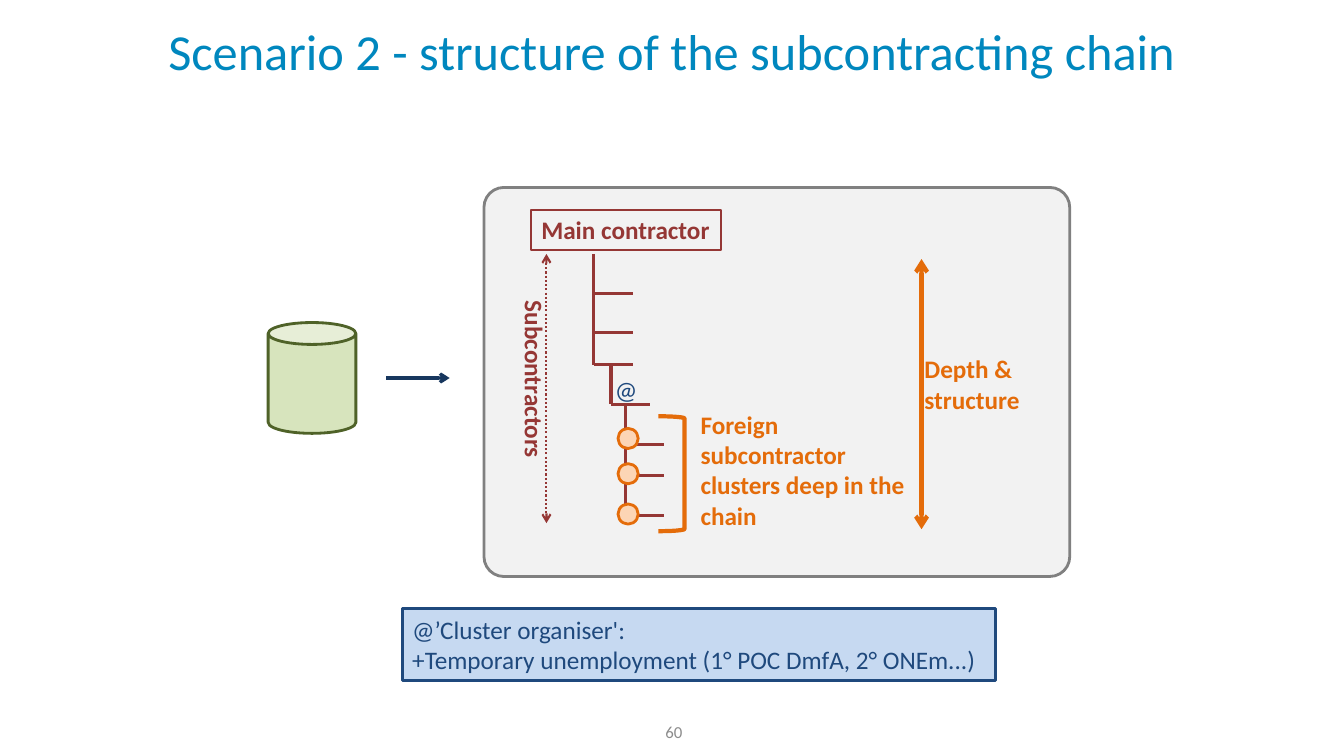
from dataclasses import dataclass
from typing import Optional

from lxml import etree
from pptx import Presentation
from pptx.dml.color import RGBColor
from pptx.enum import dml, shapes, text
from pptx.oxml import ns
from pptx.util import Inches, Pt

TITLE_BLUE = RGBColor(0x00, 0x87, 0xBE)
NAVY = RGBColor(0x1F, 0x49, 0x7D)
DARK_NAVY = RGBColor(0x17, 0x37, 0x5E)
PALE_BLUE = RGBColor(0xC6, 0xD9, 0xF1)
RED = RGBColor(0x95, 0x37, 0x35)
ORANGE = RGBColor(0xE4, 0x6C, 0x0A)
PEACH = RGBColor(0xFC, 0xD5, 0xB5)
GREEN = RGBColor(0x4F, 0x62, 0x28)
PALE_GREEN = RGBColor(0xD7, 0xE4, 0xBD)
GREY = RGBColor(0x80, 0x80, 0x80)
PALE_GREY = RGBColor(0xF2, 0xF2, 0xF2)
NUMBER_GREY = RGBColor(0x8C, 0x8C, 0x8C)

FONT = "Calibri"
BRANCH = 0.39  # length of each step of the subcontracting tree
CIRCLE = 0.2


@dataclass
class Figure:
    kind: shapes.MSO_SHAPE
    left: float
    top: float
    width: float
    height: float
    line: RGBColor
    line_width: float = 2
    fill: Optional[RGBColor] = None


@dataclass
class Line:
    x1: float
    y1: float
    x2: float
    y2: float
    color: RGBColor
    width: float = 2.25
    ends: tuple[str, ...] = ()
    dotted: bool = False


@dataclass
class Label:
    left: float
    top: float
    width: float
    height: float
    lines: tuple[str, ...]
    color: RGBColor
    bold: bool = True
    wrap: bool = False
    rotation: float = 0
    size: float = 18
    align: text.PP_ALIGN = text.PP_ALIGN.LEFT
    anchor: text.MSO_ANCHOR = text.MSO_ANCHOR.TOP


def draw_figure(page, figure: Figure):
    shape = page.shapes.add_shape(
        figure.kind, Inches(figure.left), Inches(figure.top),
        Inches(figure.width), Inches(figure.height))
    shape.shadow.inherit = False
    if figure.fill is None:
        shape.fill.background()
    else:
        shape.fill.solid()
        shape.fill.fore_color.rgb = figure.fill
    shape.line.color.rgb = figure.line
    shape.line.width = Pt(figure.line_width)
    return shape


def draw_line(page, line: Line) -> None:
    connector = page.shapes.add_connector(
        shapes.MSO_CONNECTOR.STRAIGHT, Inches(line.x1), Inches(line.y1),
        Inches(line.x2), Inches(line.y2))
    connector.line.color.rgb = line.color
    connector.line.width = Pt(line.width)
    if line.dotted:
        connector.line.dash_style = dml.MSO_LINE.ROUND_DOT
    properties = connector._element.spPr
    outline = properties.find(ns.qn("a:ln"))
    for end in line.ends:
        etree.SubElement(outline, ns.qn(f"a:{end}"), type="arrow")
    etree.SubElement(properties, ns.qn("a:effectLst"))


def write(frame, label: Label) -> None:
    frame.word_wrap = label.wrap
    frame.vertical_anchor = label.anchor
    for index, line in enumerate(label.lines):
        para = frame.add_paragraph() if index else frame.paragraphs[0]
        para.alignment = label.align
        span = para.add_run()
        span.text = line
        span.font.name = FONT
        span.font.size = Pt(label.size)
        span.font.bold = label.bold
        span.font.color.rgb = label.color


def draw_label(page, label: Label) -> None:
    box = page.shapes.add_textbox(
        Inches(label.left), Inches(label.top), Inches(label.width), Inches(label.height))
    box.rotation = label.rotation
    write(box.text_frame, label)


def draw_framed_label(page, label: Label, line: RGBColor, line_width: float,
                      fill: Optional[RGBColor] = None) -> None:
    frame = Figure(shapes.MSO_SHAPE.RECTANGLE, label.left, label.top,
                   label.width, label.height, line, line_width, fill)
    write(draw_figure(page, frame).text_frame, label)


def main() -> None:
    deck = Presentation()
    deck.slide_width, deck.slide_height = Inches(13.33), Inches(7.5)
    page = deck.slides.add_slide(deck.slide_layouts[5])

    # Title
    title = page.shapes.title
    title.left, title.top = Inches(0.21), Inches(0)
    title.width, title.height = Inches(12.91), Inches(0.99)
    write(title.text_frame, Label(
        0.21, 0, 12.91, 0.99, ("Scenario 2 - structure of the subcontracting chain",),
        TITLE_BLUE, bold=False, wrap=True, size=36,
        align=text.PP_ALIGN.CENTER, anchor=text.MSO_ANCHOR.MIDDLE))

    # Panel
    panel = draw_figure(page, Figure(
        shapes.MSO_SHAPE.ROUNDED_RECTANGLE, 4.8, 1.86, 5.81, 3.86, GREY, fill=PALE_GREY))
    panel.adjustments[0] = 0.051

    # Subcontracting tree: a stem down to each node, then a branch to the right
    nodes = [(5.89, 2.91), (5.89, 3.3), (5.89, 3.62), (6.06, 4.01),
             (6.2, 4.41), (6.2, 4.72), (6.2, 5.11)]
    for x, y in nodes:
        draw_line(page, Line(x, y - BRANCH, x, y, RED))
        draw_line(page, Line(x, y, x + BRANCH, y, RED))

    # Foreign cluster
    draw_figure(page, Figure(
        shapes.MSO_SHAPE.RIGHT_BRACKET, 6.53, 4.13, 0.26, 1.14, ORANGE, 3))
    for top in (4.25, 4.6, 5):
        draw_figure(page, Figure(
            shapes.MSO_SHAPE.OVAL, 6.13, top, CIRCLE, CIRCLE, ORANGE, fill=PEACH))

    # Database
    draw_figure(page, Figure(
        shapes.MSO_SHAPE.CAN, 2.66, 3.2, 0.87, 1.1, GREEN, fill=PALE_GREEN))

    # Arrows
    both = ("headEnd", "tailEnd")
    for arrow in (
        Line(5.42, 2.52, 5.42, 5.19, RED, 1.5, both, dotted=True),
        Line(3.83, 3.75, 4.46, 3.75, DARK_NAVY, ends=("tailEnd",)),
        Line(9.14, 2.57, 9.14, 5.25, ORANGE, 3, both),
    ):
        draw_line(page, arrow)

    # Labels
    for label in (
        Label(6.85, 4.01, 2.34, 1.31,
              ("Foreign subcontractor clusters deep in the chain",), ORANGE, wrap=True),
        Label(4.42, 3.57, 1.77, 0.4, ("Subcontractors",), RED, rotation=90),
        Label(9.07, 3.46, 1.15, 0.71, ("Depth &", "structure"), ORANGE),
        Label(6, 3.66, 0.43, 0.4, ("@",), NAVY, bold=False),
        Label(5.13, 7.06, 3.11, 0.4, ("60",), NUMBER_GREY, bold=False, wrap=True, size=12,
              align=text.PP_ALIGN.CENTER, anchor=text.MSO_ANCHOR.MIDDLE),
    ):
        draw_label(page, label)

    draw_framed_label(page, Label(5.27, 2.08, 1.88, 0.4, ("Main contractor",), RED), RED, 1.5)
    draw_framed_label(page, Label(
        3.99, 6.04, 5.88, 0.71,
        ("@’Cluster organiser':", "+Temporary unemployment (1° POC DmfA, 2° ONEm...)"),
        NAVY, bold=False), NAVY, 2, PALE_BLUE)

    deck.save("out.pptx")


if __name__ == "__main__":
    main()
